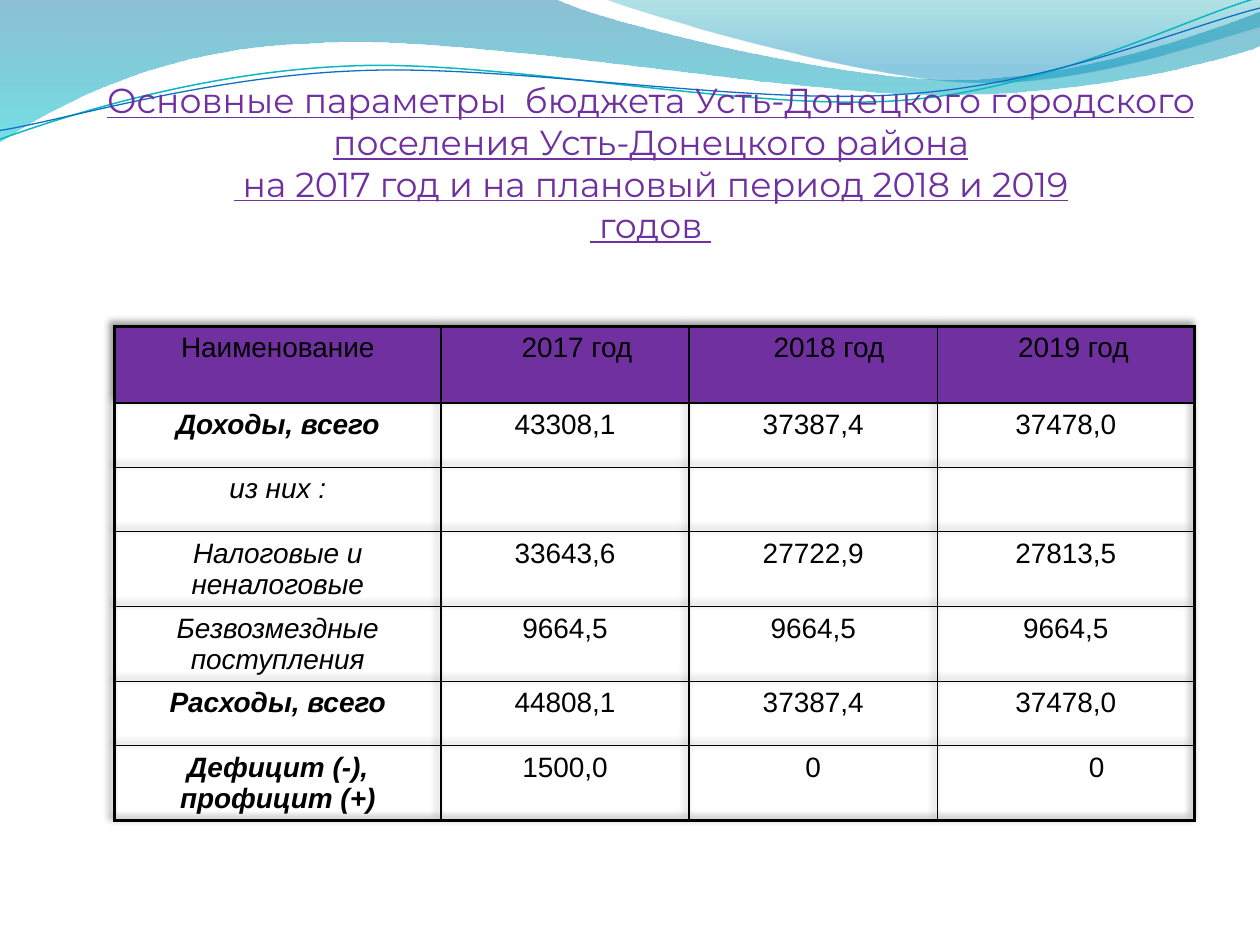
from lxml import etree
from pptx import Presentation
from pptx.dml.color import RGBColor
from pptx.enum.text import MSO_ANCHOR, MSO_AUTO_SIZE, PP_ALIGN
from pptx.oxml.ns import qn
from pptx.util import Inches, Pt

CENTER = PP_ALIGN.CENTER
BOTTOM = MSO_ANCHOR.BOTTOM
NO_FIT = MSO_AUTO_SIZE.NONE

COLORS = {
    "black": "000000", "purple": "7030A0",
    "sea": "0074A1", "aqua": "00C6CF", "teal": "00A1A9", "sky": "008BBF",
    "teal_line": "0AB8BF", "blue_line": "0F6FC6",
}

# A pair is a straight step, six numbers are a cubic curve.
BANDS = [
    ([(0, 0), (4.4, -0.01), (4.76, 0.17, 6.64, 0.63, 7.58, 0.63),
      (8.53, 0.63, 9.58, 0.26, 10, 0.09), (10.01, 0.36),
      (9.83, 0.44, 8.7, 0.76, 7.46, 0.75), (6.22, 0.75, 3.82, 0.28, 2.57, 0.34),
      (1.29, 0.36, 0.46, 0.83, -0.01, 1.13), (0, 0)],
     [(0, "sea", 45), (1, "aqua", 55)]),
    ([(4.79, -0.01), (5.09, 0.11, 6.82, 0.62, 7.69, 0.65),
      (8.56, 0.69, 9.61, 0.32, 10, 0.21), (10, 0), (4.79, -0.01)],
     [(0, "teal", 30), (0.8, "sky", 45)]),
]
STRAND_ROTATION = 357.3
STRANDS = [
    ([(-0.02, 0.87), (0.47, 0.72, 1.58, 0.41, 2.78, 0.42),
      (3.96, 0.42, 5.91, 0.93, 7.12, 0.9), (8.32, 0.87, 9.4, 0.36, 10, 0.22)],
     "teal_line", 0.85),
    ([(-0.02, 0.8), (0.46, 0.75, 1.64, 0.45, 2.83, 0.46),
      (4.04, 0.46, 5.96, 0.89, 7.16, 0.85), (8.35, 0.83, 9.42, 0.42, 10.02, 0.3)],
     "blue_line", 0.75),
]

TITLE_LINES = [
    "Основные параметры  бюджета Усть-Донецкого городского поселения Усть-Донецкого района",
    " на 2017 год и на плановый период 2018 и 2019",
    " годов ",
]

COL_WIDTHS = [2.59, 1.97, 1.97, 2.04]
ROW_HEIGHTS = [0.61] + [0.51] * 6
# Texts of a row, then bold and italic of its first cell.
ROWS = [
    (["Наименование", "2017 год", "2018 год", "2019 год"], False, False),
    (["Доходы, всего", "43308,1", "37387,4", "37478,0"], True, True),
    (["из них :", "", "", ""], False, True),
    (["Налоговые и неналоговые", "33643,6", "27722,9", "27813,5"], False, True),
    (["Безвозмездные поступления", "9664,5", "9664,5", "9664,5"], False, True),
    (["Расходы, всего", "44808,1", "37387,4", "37478,0"], True, True),
    (["Дефицит (-), профицит (+)", "1500,0", "0", "0"], True, True),
]
INDENTS = {(0, 1): 0.19, (0, 2): 0.25, (0, 3): 0.12, (6, 3): 0.49}


def rgb(name):
    return RGBColor.from_string(COLORS[name])


def add_outline(shapes, left, top, steps):
    """Draw straight steps, then bend those that carry control points."""
    ends = [(left + Inches(s[-2]), top + Inches(s[-1])) for s in steps]
    builder = shapes.build_freeform(*ends[0])
    builder.add_line_segments(ends[1:], close=steps[0] == steps[-1])
    sp = builder.convert_to_shape()
    sp.shadow.inherit = False
    segments = list(sp._element.spPr.iter(qn("a:lnTo")))
    for segment, step in zip(segments, steps[1:]):
        if len(step) == 2:
            continue
        curve = etree.Element(qn("a:cubicBezTo"))
        for x, y in zip(step[::2], step[1::2]):
            etree.SubElement(curve, qn("a:pt"), x=str(left + Inches(x) - sp.left),
                             y=str(top + Inches(y) - sp.top))
        segment.getparent().replace(segment, curve)
    return sp


def add_waves(slide, left, top):
    for steps, stops in BANDS:
        sp = add_outline(slide.shapes, left, top, steps)
        sp.line.fill.background()
        sp.fill.gradient()
        sp.fill.gradient_angle = 270
        for stop, (position, color, _) in zip(sp.fill.gradient_stops, stops):
            stop.position = position
            stop.color.rgb = rgb(color)
        for clr, (_, _, opacity) in zip(sp._element.spPr.iter(qn("a:srgbClr")), stops):
            etree.SubElement(clr, qn("a:alpha"), val=str(opacity * 1000))
    group = slide.shapes.add_group_shape()
    for steps, color, width in STRANDS:
        sp = add_outline(group.shapes, left, top, steps)
        sp.rotation = STRAND_ROTATION
        sp.fill.background()
        sp.line.color.rgb = rgb(color)
        sp.line.width = Pt(width)


def fill_title(slide, left, top, width, height):
    title = slide.shapes.title
    slide.shapes._spTree.append(title._element)  # in front of the waves
    title.left, title.top, title.width, title.height = left, top, width, height
    tf = title.text_frame
    tf.word_wrap = True
    tf.auto_size = NO_FIT
    tf.vertical_anchor = BOTTOM
    tf.margin_left = tf.margin_right = tf.margin_bottom = 0
    tf.margin_top = Inches(0.05)
    p = tf.paragraphs[0]
    p.alignment = CENTER
    for i, line in enumerate(TITLE_LINES):
        if i:
            p.add_line_break()
        r = p.add_run()
        r.text = line
        r.font.size = Pt(19.8)
        r.font.name = "Montserrat"
        r.font.underline = True
        r.font.color.rgb = rgb("purple")


def set_borders(cell, outer_sides):
    """Draw thin black cell borders, thicker on the table's outer sides."""
    tcPr = cell._tc.get_or_add_tcPr()
    for i, side in enumerate("LRTB"):
        width = Pt(2.25 if side in outer_sides else 1)
        ln = etree.Element(qn("a:ln" + side), w=str(width))
        fill = etree.SubElement(ln, qn("a:solidFill"))
        etree.SubElement(fill, qn("a:srgbClr"), val=COLORS["black"])
        tcPr.insert(i, ln)


def add_table_shadow(table):
    effects = etree.Element(qn("a:effectLst"))
    shadow = etree.SubElement(effects, qn("a:outerShdw"), blurRad=str(Pt(4)),
                              dist=str(Pt(3)), dir="13500000", algn="br", rotWithShape="0")
    clr = etree.SubElement(shadow, qn("a:srgbClr"), val=COLORS["black"])
    etree.SubElement(clr, qn("a:alpha"), val="40000")
    table._tbl.tblPr.insert(0, effects)


def add_budget_table(slide, left, top, width, height):
    table = slide.shapes.add_table(len(ROWS), len(COL_WIDTHS),
                                   left, top, width, height).table
    table.first_row = table.horz_banding = False
    add_table_shadow(table)
    for column, w in zip(table.columns, COL_WIDTHS):
        column.width = Inches(w)
    for row, h in zip(table.rows, ROW_HEIGHTS):
        row.height = Inches(h)
    last_row, last_col = len(ROWS) - 1, len(COL_WIDTHS) - 1
    for i, (texts, bold, italic) in enumerate(ROWS):
        for j, text in enumerate(texts):
            cell = table.cell(i, j)
            if i == 0:
                cell.fill.solid()
                cell.fill.fore_color.rgb = rgb("purple")
            else:
                cell.fill.background()
            edges = {"L": j == 0, "R": j == last_col, "T": i == 0, "B": i == last_row}
            set_borders(cell, [side for side, outer in edges.items() if outer])
            cell.margin_left = Inches(0.1 + INDENTS.get((i, j), 0))
            if not text:
                continue
            p = cell.text_frame.paragraphs[0]
            p.alignment = CENTER
            r = p.add_run()
            r.text = text
            r.font.size = Pt(16)
            r.font.name = "Arial"
            r.font.bold = bold and j == 0
            r.font.italic = italic and j == 0
            r.font.color.rgb = rgb("black")


def main():
    prs = Presentation()
    prs.slide_width, prs.slide_height = Inches(10), Inches(7.5)
    slide = prs.slides.add_slide(prs.slide_layouts[5])
    add_waves(slide, 0, 0)
    fill_title(slide, Inches(0.83), Inches(0.31), Inches(8.67), Inches(1.64))
    add_budget_table(slide, Inches(0.91), Inches(2.59), Inches(8.57), Inches(3.67))
    prs.save("out.pptx")


if __name__ == "__main__":
    main()
